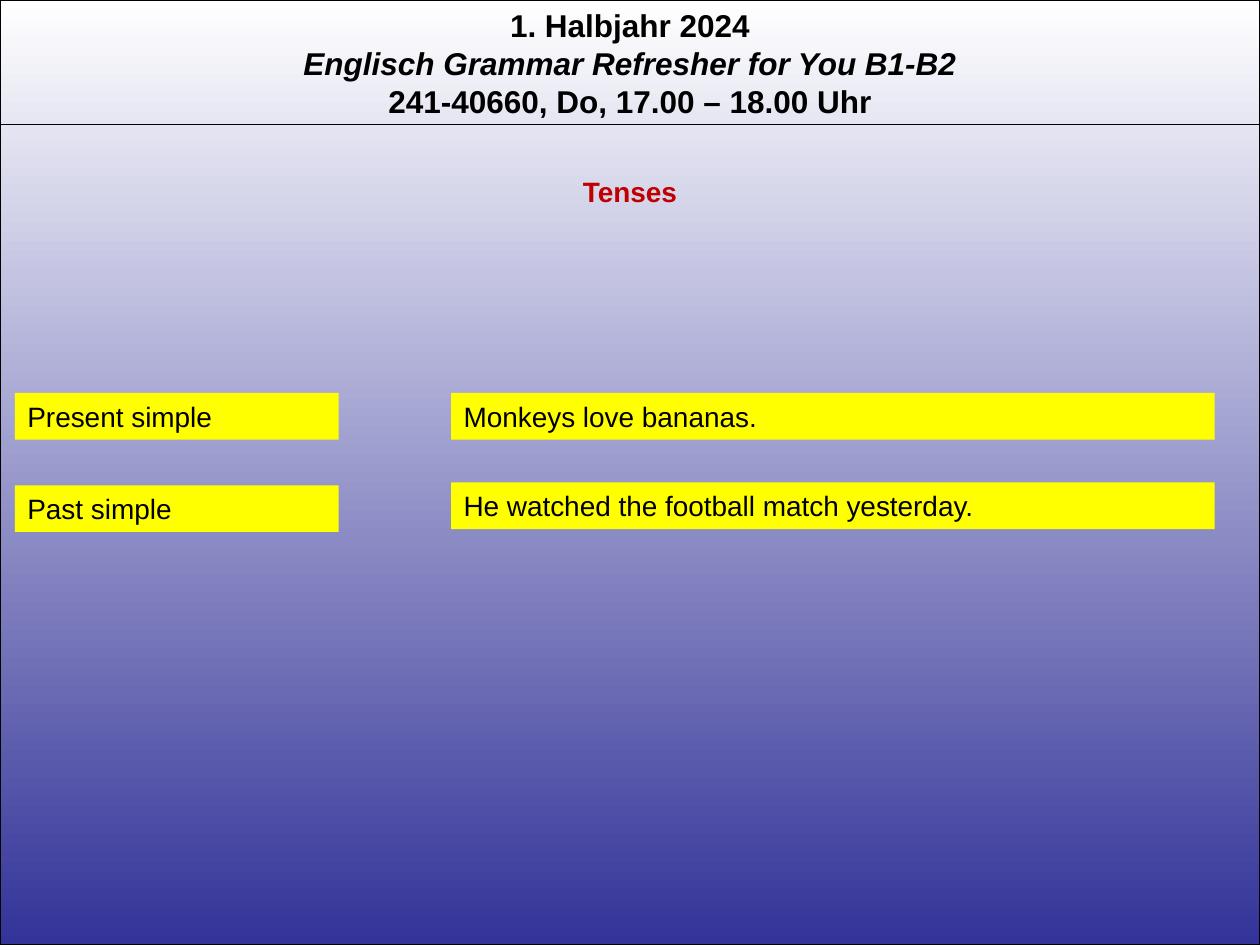
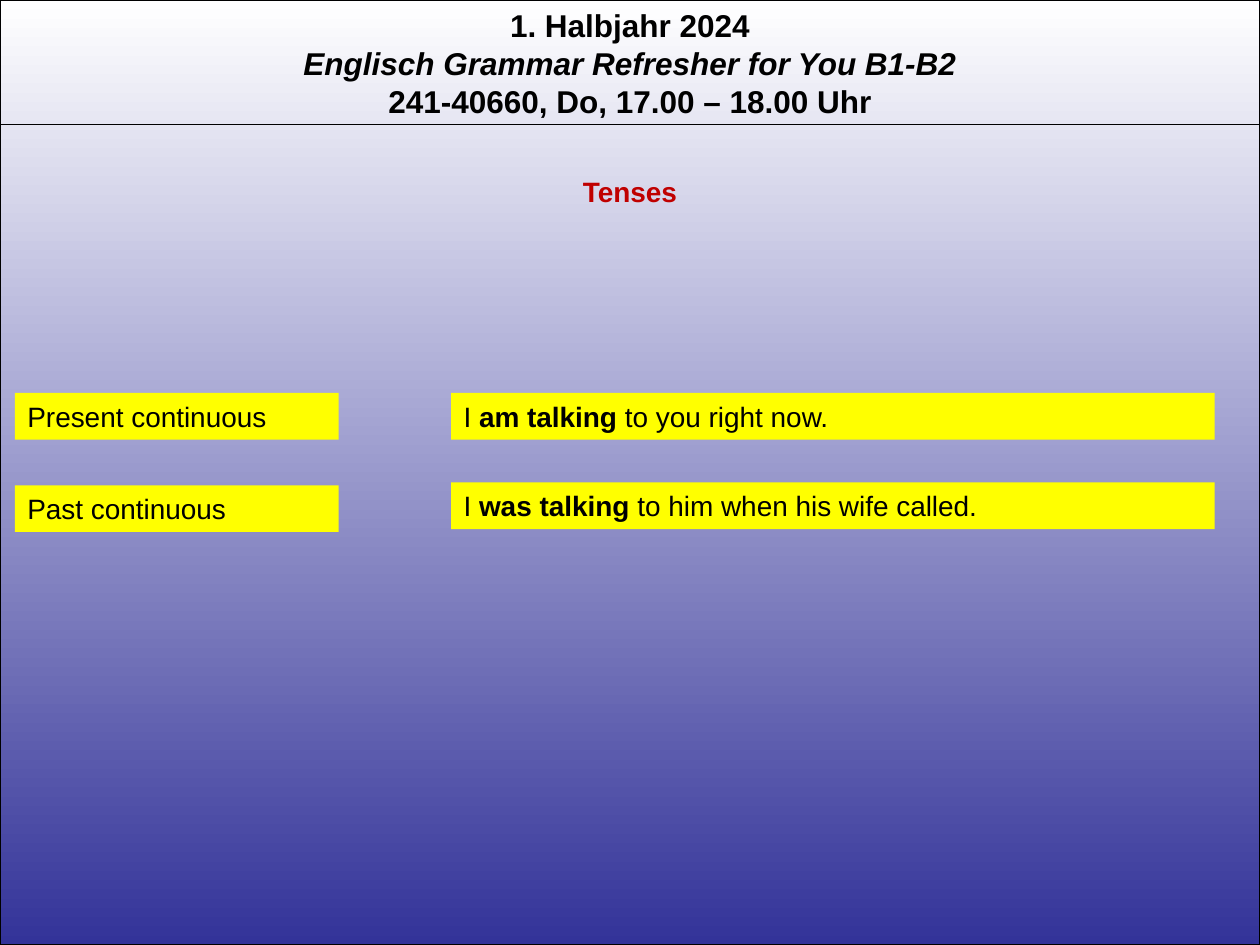
from pptx import Presentation
from pptx.dml.color import RGBColor
from pptx.enum import shapes, text
from pptx.oxml.ns import qn
from pptx.util import Pt
from lxml import etree

BLACK = RGBColor(0x00, 0x00, 0x00)
WHITE = RGBColor(0xFF, 0xFF, 0xFF)
INDIGO = RGBColor(0x33, 0x33, 0x99)
RED = RGBColor(0xC0, 0x00, 0x00)
YELLOW = RGBColor(0xFF, 0xFF, 0x00)

FONT = "Arial"
WIDTH, HEIGHT = 720, 540
LINE_WIDTH = 0.75
TEXT_HEIGHT = 26.64

COURSE = [
    "1. Halbjahr 2024",
    "Englisch Grammar Refresher for You B1-B2",
    "241-40660, Do, 17.00 – 18.00 Uhr",
]
TOPIC = "Tenses"
LESSONS = [
    [
        ("Present simple", ["Monkeys love bananas."]),
        ("Past simple", ["He watched the football match yesterday."]),
    ],
    [
        ("Present continuous", ["I ", "am talking ", "to you right now."]),
        ("Past continuous", ["I ", "was talking ", "to him when his wife called."]),
    ],
]


def points(*lengths):
    return [Pt(length) for length in lengths]


def fit_text(frame):
    frame.word_wrap = True
    frame.auto_size = text.MSO_AUTO_SIZE.SHAPE_TO_FIT_TEXT
    frame.vertical_anchor = text.MSO_ANCHOR.TOP


def style_run(run, size, color, bold=False, italic=False):
    font = run.font
    font.name, font.size = FONT, Pt(size)
    font.bold, font.italic = bold, italic
    font.color.rgb = color


def add_rectangle(slide, box):
    rectangle = slide.shapes.add_shape(shapes.MSO_SHAPE.RECTANGLE, *points(*box))
    rectangle.shadow.inherit = False
    return rectangle


def add_heading(slide, box, lines, size, color, italic_line=None):
    frame = slide.shapes.add_textbox(*points(*box)).text_frame
    fit_text(frame)
    frame.text = "\n".join(lines)
    for index, paragraph in enumerate(frame.paragraphs):
        paragraph.alignment = text.PP_ALIGN.CENTER
        style_run(paragraph.runs[0], size, color, True, index == italic_line)


def add_background(slide, box):
    backdrop = add_rectangle(slide, box)
    backdrop.fill.gradient()
    backdrop.fill.gradient_angle = 270
    for stop, color in zip(backdrop.fill.gradient_stops, (WHITE, INDIGO)):
        stop.color.rgb = color
    backdrop.line.color.rgb = BLACK
    backdrop.line.width = Pt(LINE_WIDTH)


def add_course_header(slide, box):
    left, top, width, height = box
    add_heading(slide, box, COURSE, 18, BLACK, italic_line=1)
    rule_y = top + height - 1.4
    rule = slide.shapes.add_connector(
        shapes.MSO_CONNECTOR.STRAIGHT, *points(left, rule_y, left + width, rule_y))
    rule.line.color.rgb = BLACK
    rule.line.width = Pt(LINE_WIDTH)
    etree.SubElement(rule._element.spPr, qn("a:effectLst"))


def add_card(slide, box, pieces):
    card = add_rectangle(slide, box)
    card.fill.solid()
    card.fill.fore_color.rgb = YELLOW
    card.line.fill.background()
    fit_text(card.text_frame)
    paragraph = card.text_frame.paragraphs[0]
    paragraph.alignment = text.PP_ALIGN.LEFT
    for index, piece in enumerate(pieces):
        run = paragraph.add_run()
        run.text = piece
        style_run(run, 16, BLACK, bold=index == 1)


def add_tense_pairs(slide, box, pairs):
    left, top, width, _ = box
    label_width, example_width = 185, 436.3
    example_left = left + width - example_width
    label_step, example_step = 52.8, 51.1
    for row, (tense, example) in enumerate(pairs):
        add_card(slide, (left, top + row * label_step, label_width, TEXT_HEIGHT), [tense])
        add_card(slide, (example_left, top + row * example_step, example_width, TEXT_HEIGHT),
                 example)


def add_lesson_slide(presentation, pairs):
    slide = presentation.slides.add_slide(presentation.slide_layouts[6])
    add_background(slide, (0, 0, WIDTH, HEIGHT))
    add_course_header(slide, (0, 0, WIDTH, 72.7))
    add_heading(slide, (0, 96, WIDTH, TEXT_HEIGHT), [TOPIC], 16, RED)
    add_tense_pairs(slide, (8.6, 224.6, 685.5, 79.44), pairs)


def main():
    presentation = Presentation()
    presentation.slide_width, presentation.slide_height = points(WIDTH, HEIGHT)
    for pairs in LESSONS:
        add_lesson_slide(presentation, pairs)
    presentation.save("out.pptx")


if __name__ == "__main__":
    main()
